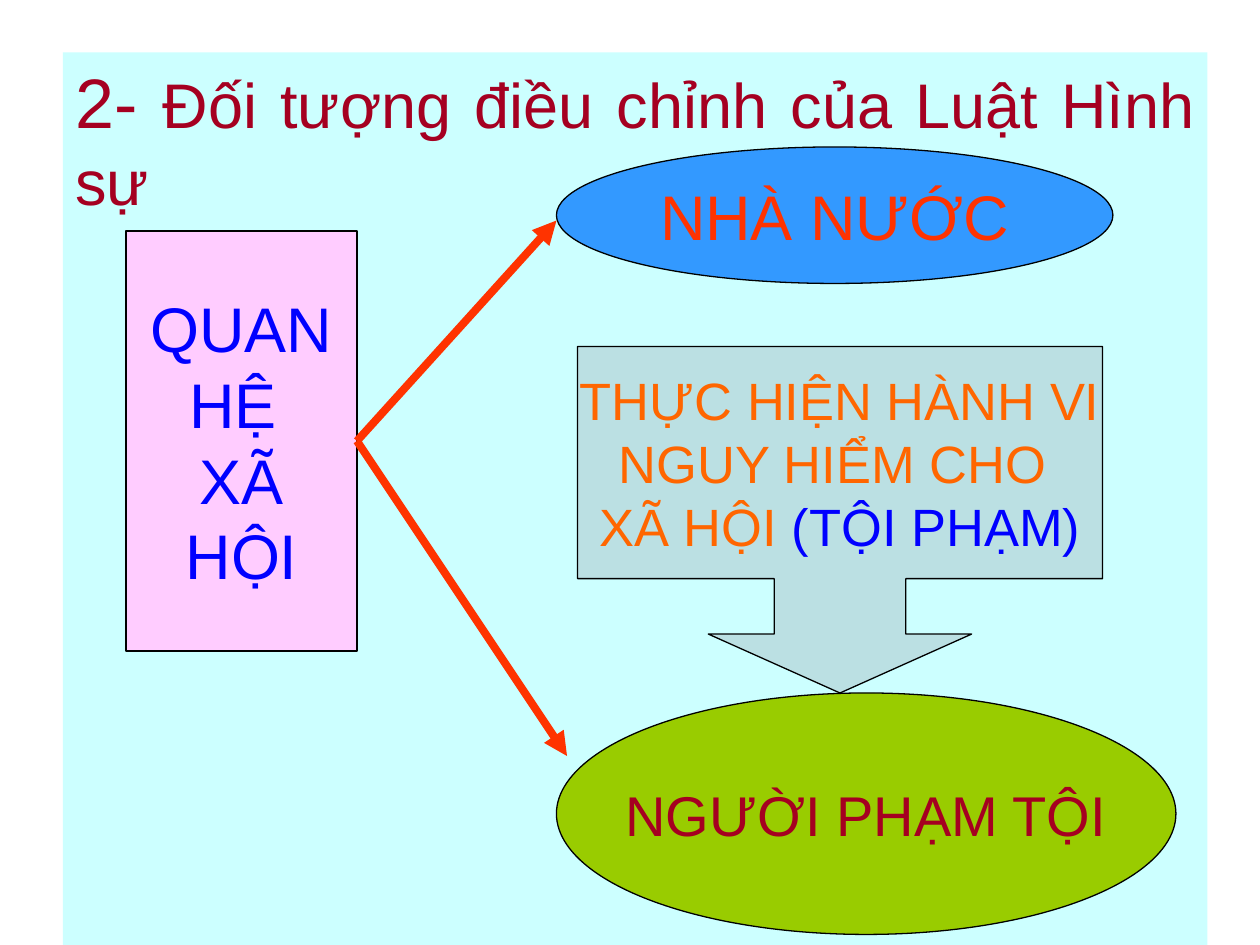
from lxml.etree import SubElement
from pptx import Presentation
from pptx.dml.color import RGBColor
from pptx.enum.shapes import MSO_CONNECTOR, MSO_SHAPE as SHAPE
from pptx.enum.text import MSO_ANCHOR as ANCHOR, PP_ALIGN as ALIGN
from pptx.oxml.ns import qn
from pptx.util import Inches, Pt

COLS, ROWS = 120, 90
WIDTH, HEIGHT = Inches(10), Inches(7.5)
FONT = "Arial"
BLACK = RGBColor(0x00, 0x00, 0x00)
BLUE = RGBColor(0x00, 0x00, 0xFF)
RED = RGBColor(0xFF, 0x33, 0x00)
ORANGE = RGBColor(0xFF, 0x66, 0x00)
CRIMSON = RGBColor(0xA5, 0x00, 0x21)
PALE_CYAN = RGBColor(0xCC, 0xFF, 0xFF)
PINK = RGBColor(0xFF, 0xCC, 0xFF)
SKY = RGBColor(0x33, 0x99, 0xFF)
PALE_TEAL = RGBColor(0xBB, 0xE0, 0xE3)
GREEN = RGBColor(0x99, 0xCC, 0x00)


def at(col, row):
    """Turn a grid position into slide lengths."""
    return round(WIDTH * col / COLS), round(HEIGHT * row / ROWS)


def add_node(s, kind, box, fill, lines, size, color):
    """Draw an outlined shape with centred lines of text."""
    sp = s.shapes.add_shape(kind, *at(*box[:2]), *at(*box[2:]))
    sp.shadow.inherit = False
    sp.fill.solid()
    sp.fill.fore_color.rgb = fill
    sp.line.color.rgb = BLACK
    sp.line.width = Pt(0.75)
    tf = sp.text_frame
    tf.word_wrap = False
    tf.vertical_anchor = ANCHOR.MIDDLE
    for i, line in enumerate(lines):
        p = tf.add_paragraph() if i else tf.paragraphs[0]
        p.alignment = ALIGN.CENTER
        p.font.name, p.font.size = FONT, Pt(size)
        p.font.color.rgb = color
        p.add_run().text = line
    return sp


def add_arrow(s, start, end):
    """Draw a thick red arrow between two grid points."""
    cx = s.shapes.add_connector(MSO_CONNECTOR.STRAIGHT, *at(*start), *at(*end))
    cx.line.color.rgb = RED
    cx.line.width = Pt(4.5)
    SubElement(cx.line._get_or_add_ln(), qn("a:tailEnd"), type="triangle")
    SubElement(cx._element.spPr, qn("a:effectLst"))


def add_panel(s, box):
    """Fill the background panel and set the heading at its top."""
    sp = s.shapes.add_shape(SHAPE.RECTANGLE, *at(*box[:2]), *at(*box[2:]))
    sp.shadow.inherit = False
    sp.fill.solid()
    sp.fill.fore_color.rgb = PALE_CYAN
    sp.line.fill.background()
    tf = sp.text_frame
    tf.word_wrap = True
    tf.vertical_anchor = ANCHOR.TOP
    p = tf.paragraphs[0]
    p.alignment = ALIGN.JUSTIFY
    p.space_before = Pt(8)
    p.font.name = FONT
    p.font.color.rgb = CRIMSON
    for text, size in (("2- ", 40), ("Đối tượng điều chỉnh của Luật Hình sự", 36)):
        r = p.add_run()
        r.text, r.font.size = text, Pt(size)


def add_diagram(s, box):
    """Lay out the social relation between the state and the offender."""
    x, y, w, h = box
    right = x + 0.41 * w
    add_node(s, SHAPE.OVAL, (right, y, 53, 13), SKY, ["NHÀ NƯỚC"], 36, RED)
    add_node(s, SHAPE.RECTANGLE, (x, y + 8, 22, 40), PINK,
             ["QUAN", "HỆ ", "XÃ", "HỘI"], 36, BLUE)
    hub = x + 22, y + 28
    add_arrow(s, hub, (right, y + 7))
    act = add_node(s, SHAPE.DOWN_ARROW_CALLOUT, (right + 2, y + 19, 50, 33),
                   PALE_TEAL, ["THỰC HIỆN HÀNH VI", "NGUY HIỂM CHO ", "XÃ HỘI "],
                   30, ORANGE)
    for i, share in enumerate((0.38, 0.38, 0.17, 0.67)):
        act.adjustments[i] = share
    r = act.text_frame.paragraphs[-1].add_run()
    r.text, r.font.color.rgb = "(TỘI PHẠM)", BLUE
    add_arrow(s, hub, (right + 1, y + 58))
    add_node(s, SHAPE.OVAL, (right, y + h - 23, 59, 23), GREEN,
             ["NGƯỜI PHẠM TỘI"], 32, CRIMSON)


def main():
    """Build the slide and save it."""
    prs = Presentation()
    prs.slide_width, prs.slide_height = WIDTH, HEIGHT
    s = prs.slides.add_slide(prs.slide_layouts[6])
    add_panel(s, (6, 5, 109, 85))
    add_diagram(s, (12, 14, 100, 75))
    prs.save("out.pptx")


if __name__ == "__main__":
    main()
